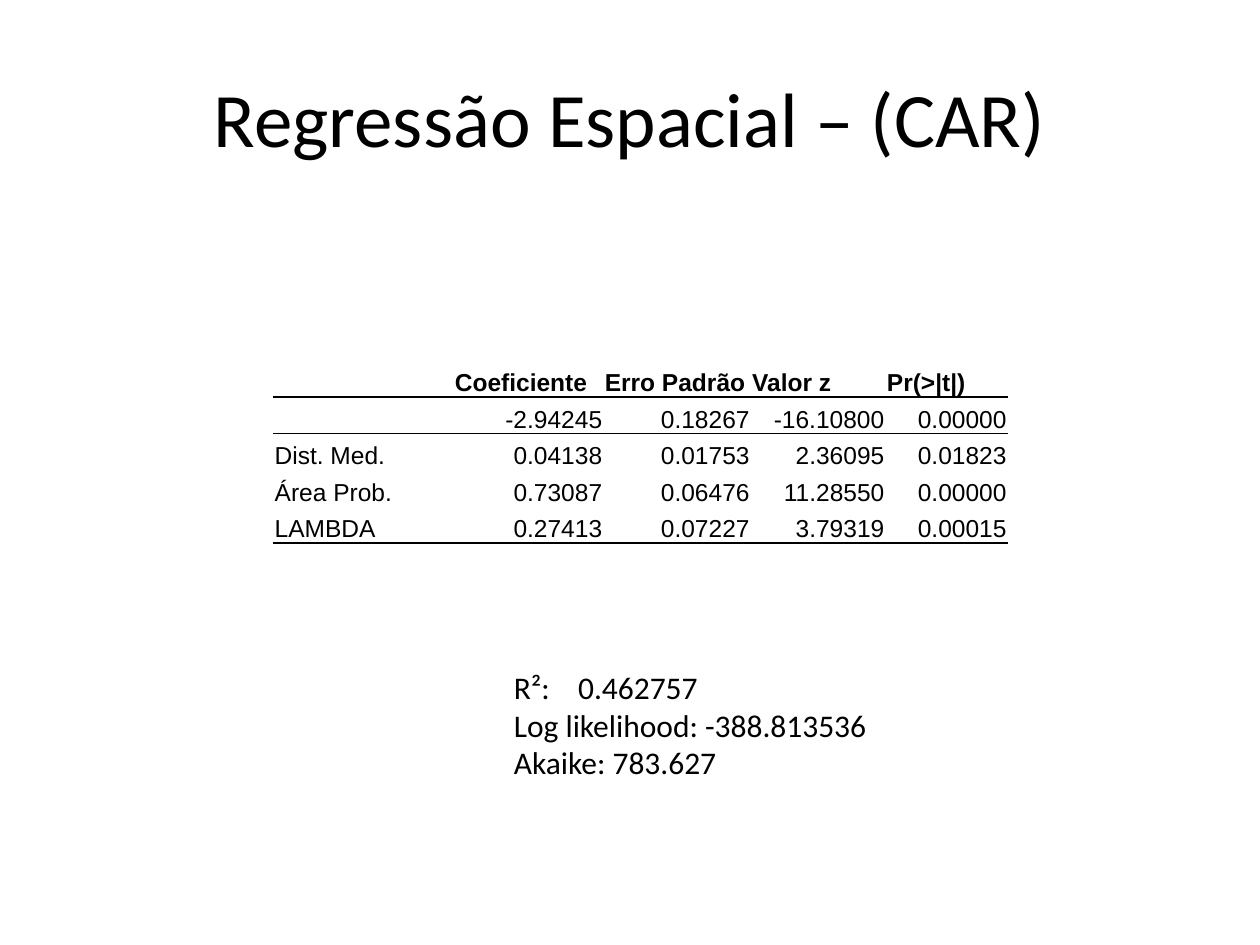
import pptx
import pptx.dml.color
import pptx.enum.text
import pptx.oxml.ns
import pptx.util
from lxml import etree
from pptx.util import Inches

BLACK = pptx.dml.color.RGBColor(0, 0, 0)
ALIGN = pptx.enum.text.PP_ALIGN
ANCHOR = pptx.enum.text.MSO_ANCHOR
qn = pptx.oxml.ns.qn

NO_STYLE = "{2D5ABB26-0587-4C30-8999-92F81FD0307C}"
COL_WIDTHS = [1.43, 1.19, 1.17, 1.07, 0.97]
ROW_HEIGHTS = [0.5] + [0.29] * 4
ROWS = [
    ["", "Coeficiente", "Erro Padrão", "Valor z", "Pr(>|t|)"],
    ["", "-2.94245", "0.18267", "-16.10800", "0.00000"],
    ["Dist. Med.", "0.04138", "0.01753", "2.36095", "0.01823"],
    ["Área Prob.", "0.73087", "0.06476", "11.28550", "0.00000"],
    ["LAMBDA", "0.27413", "0.07227", "3.79319", "0.00015"],
]
FIT_LINES = ["R²:\t0.462757", "Log likelihood: -388.813536", "Akaike: 783.627"]


def format_runs(p, font, size, bold=False):
    for r in p.runs:
        r.font.name = font
        r.font.size = pptx.util.Pt(size)
        r.font.bold = bold
        r.font.color.rgb = BLACK


def add_border(cell, side):
    ln = etree.Element(qn("a:" + side), w=str(pptx.util.Pt(1)))
    fill = etree.SubElement(ln, qn("a:solidFill"))
    etree.SubElement(fill, qn("a:srgbClr"), val=str(BLACK))
    cell._tc.get_or_add_tcPr().insert(0, ln)


def add_title(slide, left, top, width, height):
    s = slide.shapes.add_textbox(left, top, width, height)
    tf = s.text_frame
    tf.word_wrap = True
    tf.vertical_anchor = ANCHOR.MIDDLE
    tf.text = "Regressão Espacial – (CAR)"
    p = tf.paragraphs[0]
    p.alignment = ALIGN.CENTER
    format_runs(p, "Calibri", 44)


def fill_cell(cell, text, header, number):
    cell.fill.background()
    cell.margin_left = cell.margin_right = cell.margin_top = Inches(0.01)
    cell.margin_bottom = 0
    cell.vertical_anchor = ANCHOR.BOTTOM
    cell.text = text
    p = cell.text_frame.paragraphs[0]
    p.alignment = ALIGN.RIGHT if number else ALIGN.LEFT
    format_runs(p, "Arial", 14, header)
    if not text:
        # Keeps an empty cell from stretching its row
        etree.SubElement(p._p, qn("a:endParaRPr"), sz="1400")


def add_coefficients(slide, left, top, width, height):
    s = slide.shapes.add_table(len(ROWS), len(COL_WIDTHS), left, top, width, height)
    table = s.table
    table.horz_banding = False
    table._tbl.tblPr.find(qn("a:tableStyleId")).text = NO_STYLE
    for column, w in zip(table.columns, COL_WIDTHS):
        column.width = Inches(w)
    for row, h in zip(table.rows, ROW_HEIGHTS):
        row.height = Inches(h)
    for i, values in enumerate(ROWS):
        for j, text in enumerate(values):
            cell = table.cell(i, j)
            fill_cell(cell, text, header=i == 0, number=i > 0 and j > 0)
            # Rules under the header and the last row
            if i in (0, len(ROWS) - 1):
                add_border(cell, "lnB")
            if i == 1:
                add_border(cell, "lnT")


def add_fit_statistics(slide, left, top, width, height):
    s = slide.shapes.add_textbox(left, top, width, height)
    tf = s.text_frame
    tf.word_wrap = True
    tf.text = "\n".join(FIT_LINES)
    for p in tf.paragraphs:
        format_runs(p, "Calibri", 18)
    # Tab stop for the R² value
    tabs = etree.SubElement(tf.paragraphs[0]._p.get_or_add_pPr(), qn("a:tabLst"))
    etree.SubElement(tabs, qn("a:tab"), pos=str(Inches(0.51)), algn="l")


def main():
    prs = pptx.Presentation()
    prs.slide_width = Inches(10)
    prs.slide_height = Inches(7.5)
    slide = prs.slides.add_slide(prs.slide_layouts[6])
    add_title(slide, Inches(0.5), Inches(0.3), Inches(9), Inches(1.25))
    add_coefficients(slide, Inches(2.17), Inches(2.65), Inches(5.83), Inches(1.65))
    add_fit_statistics(slide, Inches(3.98), Inches(5.25), Inches(3.03), Inches(1.31))
    prs.save("out.pptx")


if __name__ == "__main__":
    main()
